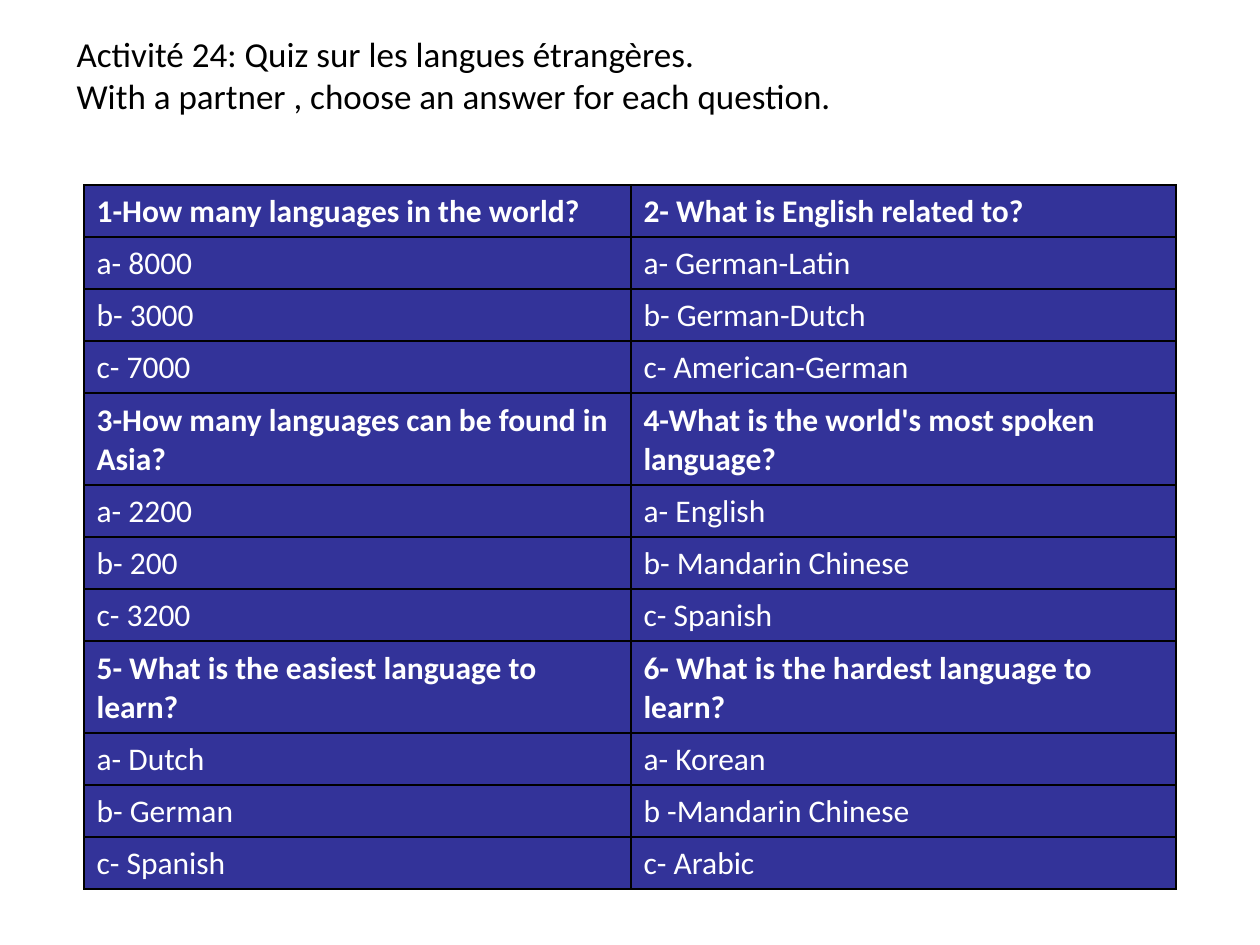
from typing import NamedTuple

from lxml import etree
from pptx import Presentation
from pptx.dml.color import RGBColor
from pptx.enum.text import MSO_ANCHOR, MSO_AUTO_SIZE, PP_ALIGN
from pptx.oxml.ns import qn
from pptx.util import Emu, Pt

TOP, BOTTOM = MSO_ANCHOR.TOP, MSO_ANCHOR.BOTTOM
LEFT = PP_ALIGN.LEFT
FIXED = MSO_AUTO_SIZE.NONE
FONT = "Calibri"
BLACK, WHITE, BLUE = "000000", "FFFFFF", "333399"
COLS = (547, 545)
LOW, TALL = 52, 92  # row heights for one and two lines


class Quiz(NamedTuple):
    ask: str
    picks: tuple[str, ...]


class Band(NamedTuple):
    height: int
    pair: tuple[Quiz, Quiz]


BANDS = (
    Band(LOW, (
        Quiz("1-How many languages in the world?", ("a- 8000", "b- 3000", "c- 7000")),
        Quiz("2- What is English related to?",
             ("a- German-Latin", "b- German-Dutch", "c- American-German")),
    )),
    Band(TALL, (
        Quiz("3-How many languages can be found in Asia?", ("a- 2200", "b- 200", "c- 3200")),
        Quiz("4-What is the world's most spoken language?",
             ("a- English", "b- Mandarin Chinese", "c- Spanish")),
    )),
    Band(TALL, (
        Quiz("5- What is the easiest language to learn?", ("a- Dutch", "b- German", "c- Spanish")),
        Quiz("6- What is the hardest language to learn?",
             ("a- Korean", "b -Mandarin Chinese", "c- Arabic")),
    )),
)


def px(n: int) -> Emu:
    return Emu(round(n * 914400 / 126))


def paint(target, color: str) -> None:
    target.rgb = RGBColor.from_string(color)


def style(frame, size: int, color: str, bold: bool = False) -> None:
    for para in frame.paragraphs:
        para.alignment = LEFT
        for run in para.runs:
            font = run.font
            font.name, font.size, font.bold = FONT, Pt(size), bold
            paint(font.color, color)


def edge(cell) -> None:
    props = cell._tc.get_or_add_tcPr()
    for side in ("lnL", "lnR", "lnT", "lnB"):
        line = etree.SubElement(props, qn(f"a:{side}"), w=str(Pt(1)))
        fill = etree.SubElement(line, qn("a:solidFill"))
        etree.SubElement(fill, qn("a:srgbClr"), val=BLACK)


def write(cell, text: str, bold: bool) -> None:
    edge(cell)
    cell.fill.solid()
    paint(cell.fill.fore_color, BLUE)
    cell.vertical_anchor = BOTTOM
    cell.text_frame.text = text
    style(cell.text_frame, 18, WHITE, bold)


def head(slide) -> None:
    title = slide.shapes.title
    title.left, title.top, title.width, title.height = map(px, (64, 26, 1062, 88))
    frame = title.text_frame
    frame.text = ("Activité 24: Quiz sur les langues étrangères.\n"
                  "With a partner , choose an answer for each question.")
    frame.word_wrap, frame.auto_size, frame.vertical_anchor = True, FIXED, TOP
    for para in frame.paragraphs:
        para.line_spacing = 1.0
        para.space_before = Pt(0)
    style(frame, 20, BLACK)


def grid(slide) -> None:
    # Each band gives one question row and its answer rows
    rows = []
    for band in BANDS:
        rows.append((band.height, True, [quiz.ask for quiz in band.pair]))
        rows += [(LOW, False, picks) for picks in zip(*(quiz.picks for quiz in band.pair))]
    total = sum(row[0] for row in rows)
    table = slide.shapes.add_table(
        len(rows), len(COLS), px(84), px(185), px(sum(COLS)), px(total)).table
    for col, width in zip(table.columns, COLS):
        col.width = px(width)
    for r, (height, bold, texts) in enumerate(rows):
        table.rows[r].height = px(height)
        for c, text in enumerate(texts):
            write(table.cell(r, c), text, bold)


def main() -> None:
    deck = Presentation()
    deck.slide_width, deck.slide_height = px(1260), px(945)
    slide = deck.slides.add_slide(deck.slide_layouts[5])
    grid(slide)
    head(slide)
    deck.save("out.pptx")


if __name__ == "__main__":
    main()
